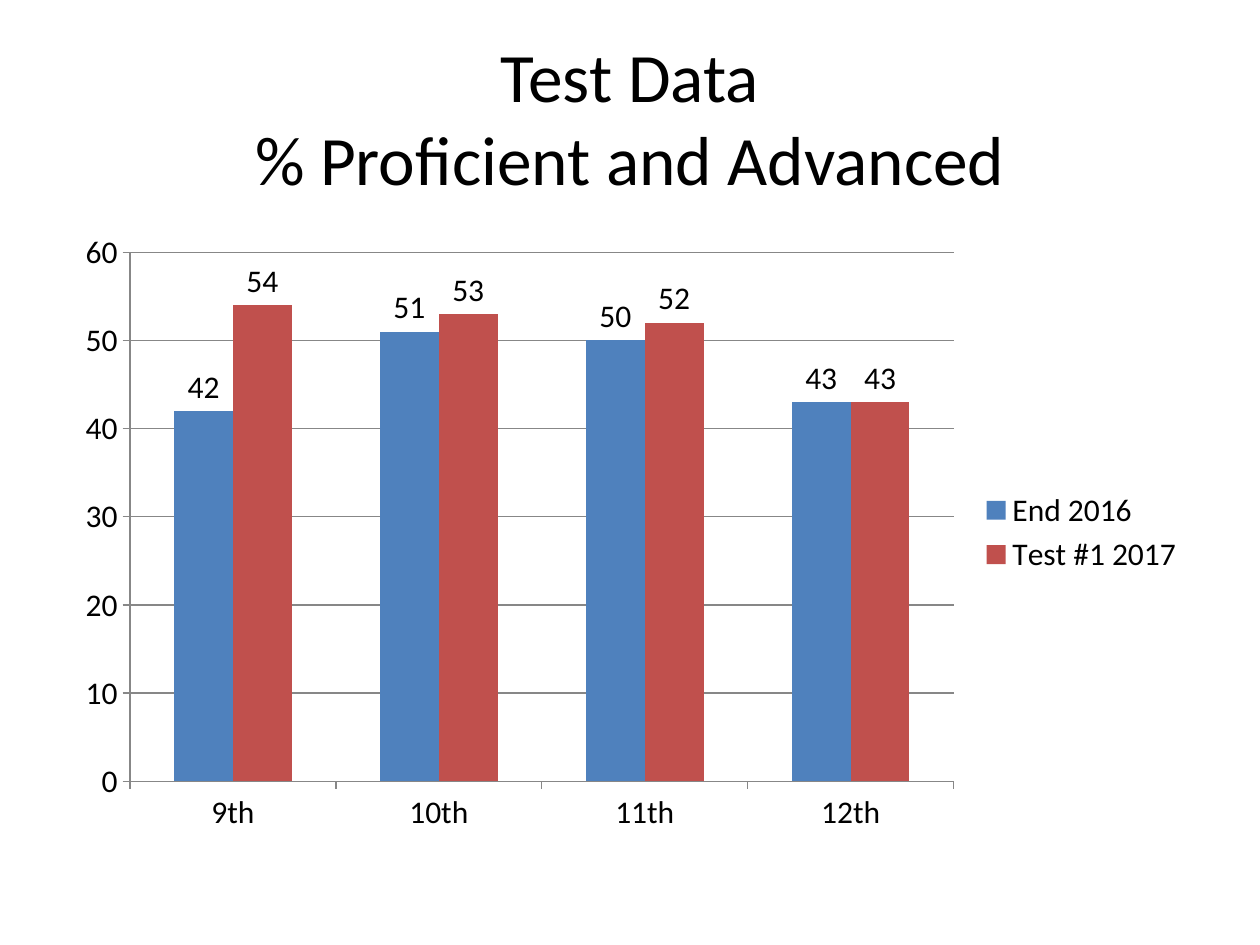
import pptx
import pptx.chart.data
import pptx.dml.color
import pptx.enum.chart
import pptx.enum.text
import pptx.util
from pptx.util import Cm, Pt

FONT = "Calibri"
COLORS = {"text": "000000", "axis": "878787", "End 2016": "4F81BD", "Test #1 2017": "C0504D"}
SCORES = {"End 2016": (42, 51, 50, 43), "Test #1 2017": (54, 53, 52, 43)}


def rgb(name):
    return pptx.dml.color.RGBColor.from_string(COLORS[name])


def style_font(font, size):
    font.name = FONT
    font.size = Pt(size)
    font.bold = False
    font.color.rgb = rgb("text")


# Slide
deck = pptx.Presentation()
deck.slide_width, deck.slide_height = Cm(25.4), Cm(19.05)
slide = deck.slides.add_slide(deck.slide_layouts[5])

# Title
heading = slide.shapes.title
heading.left, heading.top, heading.width, heading.height = Cm(1.27), Cm(0.76), Cm(22.86), Cm(3.18)
heading.text_frame.text = "Test Data\v% Proficient and Advanced"
heading.text_frame.vertical_anchor = pptx.enum.text.MSO_ANCHOR.MIDDLE
heading_line = heading.text_frame.paragraphs[0]
heading_line.alignment = pptx.enum.text.PP_ALIGN.CENTER
for run in heading_line.runs:
    style_font(run.font, 39.6)

# Scores by grade
grade_scores = pptx.chart.data.CategoryChartData()
grade_scores.categories = ["9th", "10th", "11th", "12th"]
for test, values in SCORES.items():
    grade_scores.add_series(test, values)
score_chart = slide.shapes.add_chart(
    pptx.enum.chart.XL_CHART_TYPE.COLUMN_CLUSTERED,
    Cm(1.27), Cm(4.45), Cm(22.86), Cm(12.57), grade_scores).chart
style_font(score_chart.font, 18)
score_chart.has_title = False

# Bars and their labels
bars = score_chart.plots[0]
bars.gap_width = 150
bars.overlap = 0
bars.vary_by_categories = False
for test in bars.series:
    test.format.fill.solid()
    test.format.fill.fore_color.rgb = rgb(test.name)
    test.data_labels.show_value = True
    test.data_labels.position = pptx.enum.chart.XL_LABEL_POSITION.OUTSIDE_END

# Axes and gridlines
grades, percent = score_chart.category_axis, score_chart.value_axis
percent.minimum_scale, percent.maximum_scale, percent.major_unit = 0, 60, 10
percent.has_major_gridlines = True
for axis in (grades, percent):
    axis.major_tick_mark = pptx.enum.chart.XL_TICK_MARK.OUTSIDE
    axis.minor_tick_mark = pptx.enum.chart.XL_TICK_MARK.NONE
for part in (grades, percent, percent.major_gridlines):
    part.format.line.color.rgb = rgb("axis")
    part.format.line.width = Pt(0.75)

# Legend
score_chart.has_legend = True
score_chart.legend.position = pptx.enum.chart.XL_LEGEND_POSITION.RIGHT
score_chart.legend.include_in_layout = False

deck.save("out.pptx")
